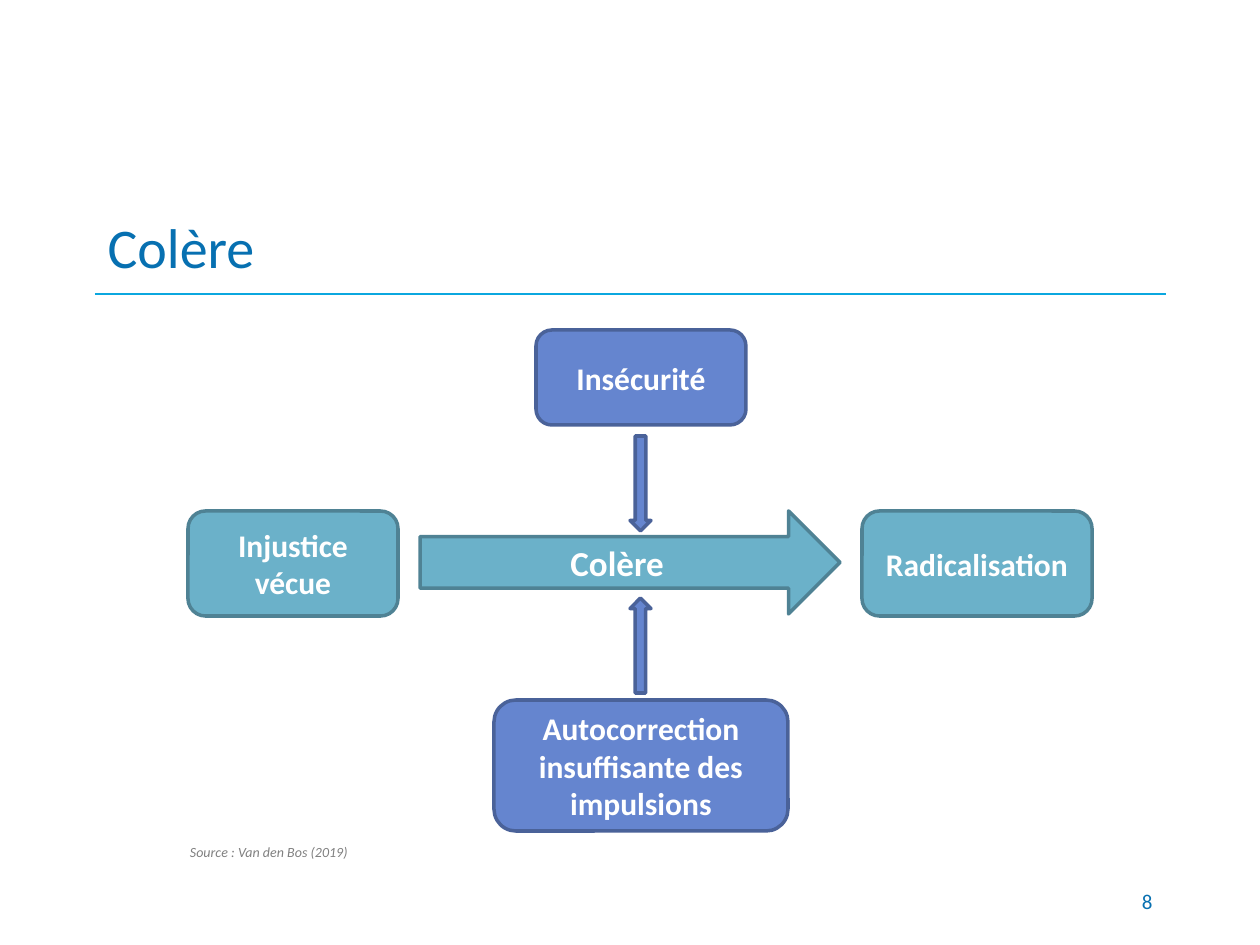
import pptx
import pptx.util
import pptx.dml.color
import pptx.enum.shapes
import pptx.enum.text
import pptx.oxml.ns
from lxml import etree

SHAPE = pptx.enum.shapes.MSO_SHAPE
ALIGN = pptx.enum.text.PP_ALIGN
ANCHOR = pptx.enum.text.MSO_ANCHOR

PX_PER_INCH = 126
THEME = {
    "font": "Calibri",
    "blue": "0770B1",
    "rule": "0BA7DF",
    "grey": "808080",
    "white": "FFFFFF",
    "teal": ("6BB1C9", "4F8294"),
    "indigo": ("6585CF", "4A6299"),
    "title": 32,
    "arrow": 20,
    "box": 18,
    "number": 12,
    "source": 8,
    "outline": 2,
    "hairline": 0.75,
}

TITLE = "Colère"
SOURCE = "Source\u00a0: Van den Bos (2019)"
NUMBER = "8"
# kind, palette, (left, top, width, height), rotation, text, text size
DIAGRAM = [
    (SHAPE.ROUNDED_RECTANGLE, "teal", (188, 511, 210, 105), 0, "Injustice vécue", "box"),
    (SHAPE.ROUNDED_RECTANGLE, "teal", (862, 511, 230, 105), 0, "Radicalisation", "box"),
    (SHAPE.RIGHT_ARROW, "teal", (420, 511, 420, 103), 0, "Colère", "arrow"),
    (SHAPE.RIGHT_ARROW, "indigo", (593, 473, 95, 21), 90, "", "box"),
    (SHAPE.RIGHT_ARROW, "indigo", (593, 635, 95, 21), 270, "", "box"),
    (SHAPE.ROUNDED_RECTANGLE, "indigo", (494, 700, 294, 131), 0,
     "Autocorrection insuffisante des impulsions", "box"),
    (SHAPE.ROUNDED_RECTANGLE, "indigo", (536, 330, 210, 95), 0, "Insécurité", "box"),
]


def px(n):
    return pptx.util.Emu(round(n * 914400 / PX_PER_INCH))


def rgb(value):
    return pptx.dml.color.RGBColor.from_string(value)


def write(sp, text, size, color, align, anchor=ANCHOR.MIDDLE, **font):
    tf = sp.text_frame
    tf.word_wrap = True
    tf.vertical_anchor = anchor
    p = tf.paragraphs[0]
    p.alignment = align
    r = p.add_run()
    r.text = text
    r.font.color.rgb = rgb(THEME[color])
    formats = {"name": THEME["font"], "size": pptx.util.Pt(THEME[size]), **font}
    for name, value in formats.items():
        setattr(r.font, name, value)


def add_rule(slide, left, right, y):
    line = slide.shapes.add_connector(
        pptx.enum.shapes.MSO_CONNECTOR.STRAIGHT, px(left), px(y), px(right), px(y))
    line.line.color.rgb = rgb(THEME["rule"])
    line.line.width = pptx.util.Pt(THEME["hairline"])
    etree.SubElement(line._element.spPr, pptx.oxml.ns.qn("a:effectLst"))


def add_diagram_part(slide, kind, palette, place, rotation, text, size):
    sp = slide.shapes.add_shape(kind, *map(px, place))
    fill, outline = THEME[palette]
    sp.rotation = rotation
    sp.shadow.inherit = False
    sp.fill.solid()
    sp.fill.fore_color.rgb = rgb(fill)
    sp.line.color.rgb = rgb(outline)
    sp.line.width = pptx.util.Pt(THEME["outline"])
    if text:
        write(sp, text, size, "white", ALIGN.CENTER, bold=True)


def main():
    prs = pptx.Presentation()
    prs.slide_width, prs.slide_height = px(1260), px(945)
    slide = prs.slides.add_slide(prs.slide_layouts[5])

    add_rule(slide, 95, 1166, 294)

    title = slide.shapes.title
    title.left, title.top, title.width, title.height = map(px, (95, 199, 1071, 95))
    write(title, TITLE, "title", "blue", ALIGN.LEFT)

    for part in DIAGRAM:
        add_diagram_part(slide, *part)

    source = slide.shapes.add_textbox(*map(px, (95, 837, 348, 29)))
    write(source, SOURCE, "source", "grey", ALIGN.CENTER, ANCHOR.TOP, italic=True)
    number = slide.shapes.add_textbox(*map(px, (903, 876, 262, 50)))
    write(number, NUMBER, "number", "blue", ALIGN.RIGHT)

    prs.save("out.pptx")


if __name__ == "__main__":
    main()
